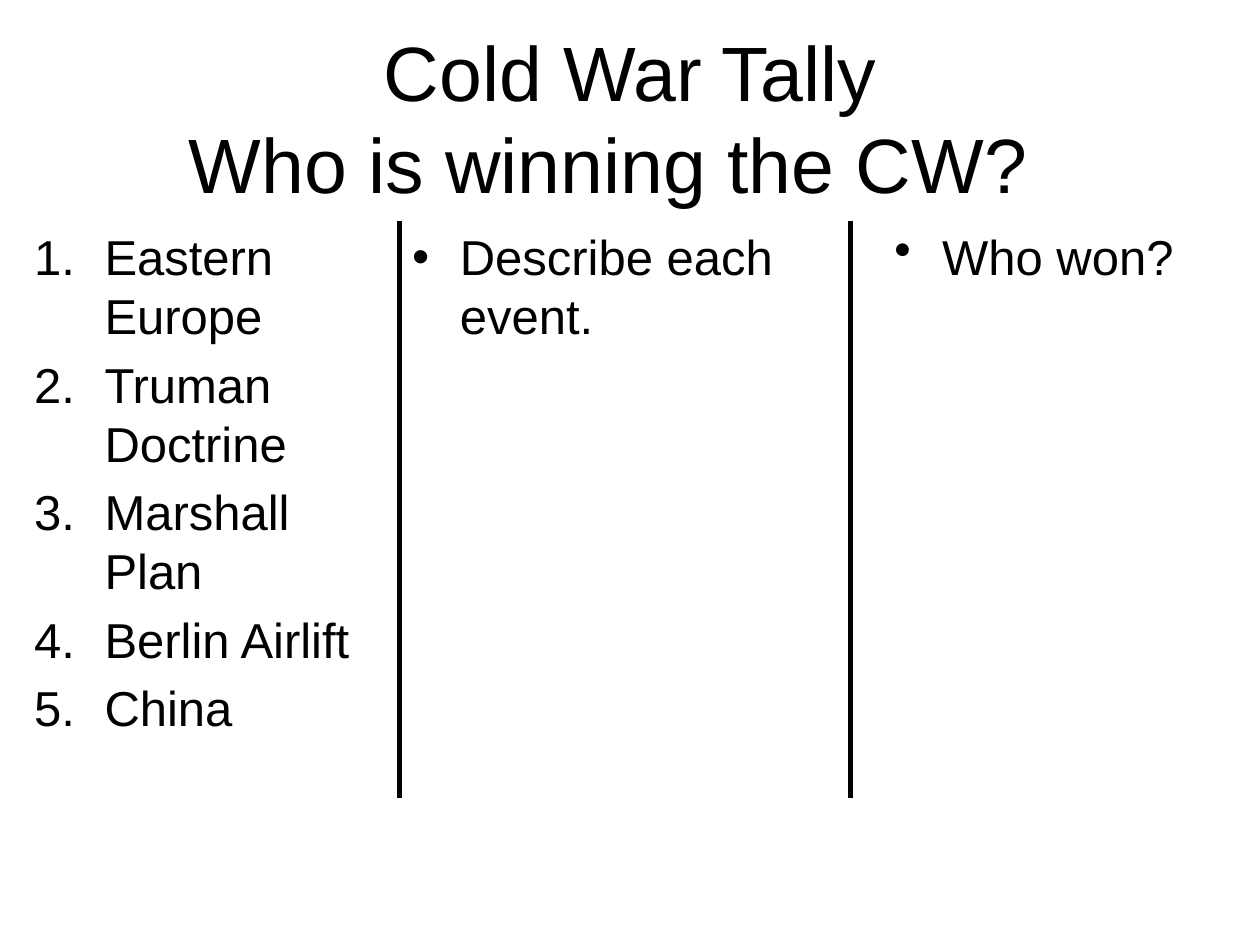
from dataclasses import dataclass

from lxml import etree
from pptx import Presentation
from pptx import util as u
from pptx.dml.color import RGBColor
from pptx.enum import shapes, text
from pptx.oxml.ns import qn


@dataclass(frozen=True)
class Theme:
    font: str = "Arial"
    ink: RGBColor = RGBColor(0, 0, 0)
    title_size: float = 44
    body_size: float = 28
    space_before: float = 5.6
    rule_width: float = 3


THEME = Theme()
WIDTH, HEIGHT = 10, 7.5
TITLE = "Cold War Tally\vWho is winning the CW?  "
TITLE_BOX = (0.5, 0.3, 9, 1.25)
BODY_TOP, BODY_HEIGHT = 1.75, 4.95
RULE_BOTTOM = 6.33
RULES = (3.17, 6.75)
NUMBERED = ("buAutoNum", {"type": "arabicPeriod"}, 0.56)
BULLETED = ("buChar", {"char": "•"}, 0.38)
COLUMNS = [
    (0.17, 3, NUMBERED, ["Eastern Europe", "Truman Doctrine", "Marshall Plan",
                         "Berlin Airlift", "China"]),
    (3.17, 3.92, BULLETED, ["Describe each event."]),
    (7, 3, BULLETED, ["Who won?"]),
]


def place(shape, left, top, width, height):
    shape.left, shape.top = u.Inches(left), u.Inches(top)
    shape.width, shape.height = u.Inches(width), u.Inches(height)


def style(paragraph, size):
    paragraph.font.name = THEME.font
    paragraph.font.size = u.Pt(size)
    paragraph.font.color.rgb = THEME.ink


def mark(paragraph, tag, attributes, indent):
    properties = paragraph._p.get_or_add_pPr()
    properties.set("marL", str(u.Inches(indent)))
    properties.set("indent", str(-u.Inches(indent)))
    paragraph.space_before = u.Pt(THEME.space_before)
    bullet = etree.Element(qn(f"a:{tag}"), attributes)
    properties.find(qn("a:spcBef")).addnext(bullet)


def fill_list(shape, marker, items):
    frame = shape.text_frame
    frame.word_wrap = True
    frame.auto_size = text.MSO_AUTO_SIZE.NONE
    frame.text = "\n".join(items)
    for paragraph in frame.paragraphs:
        mark(paragraph, *marker)
        style(paragraph, THEME.body_size)


def add_rule(slide, x):
    rule = slide.shapes.add_connector(
        shapes.MSO_CONNECTOR.STRAIGHT,
        u.Inches(x), u.Inches(BODY_TOP), u.Inches(x), u.Inches(RULE_BOTTOM))
    rule.line.color.rgb = THEME.ink
    rule.line.width = u.Pt(THEME.rule_width)
    etree.SubElement(rule._element.spPr, qn("a:effectLst"))


def main():
    presentation = Presentation()
    presentation.slide_width = u.Inches(WIDTH)
    presentation.slide_height = u.Inches(HEIGHT)
    slide = presentation.slides.add_slide(
        presentation.slide_layouts.get_by_name("Two Content"))

    title, *bodies = slide.placeholders
    place(title, *TITLE_BOX)
    title.text_frame.text = TITLE
    title.text_frame.auto_size = text.MSO_AUTO_SIZE.NONE
    title.text_frame.vertical_anchor = text.MSO_ANCHOR.MIDDLE
    heading = title.text_frame.paragraphs[0]
    heading.alignment = text.PP_ALIGN.CENTER
    style(heading, THEME.title_size)

    bodies.append(slide.shapes.add_textbox(0, 0, 0, 0))
    for shape, (left, width, marker, items) in zip(bodies, COLUMNS):
        place(shape, left, BODY_TOP, width, BODY_HEIGHT)
        fill_list(shape, marker, items)

    for x in RULES:
        add_rule(slide, x)

    presentation.save("out.pptx")


if __name__ == "__main__":
    main()
